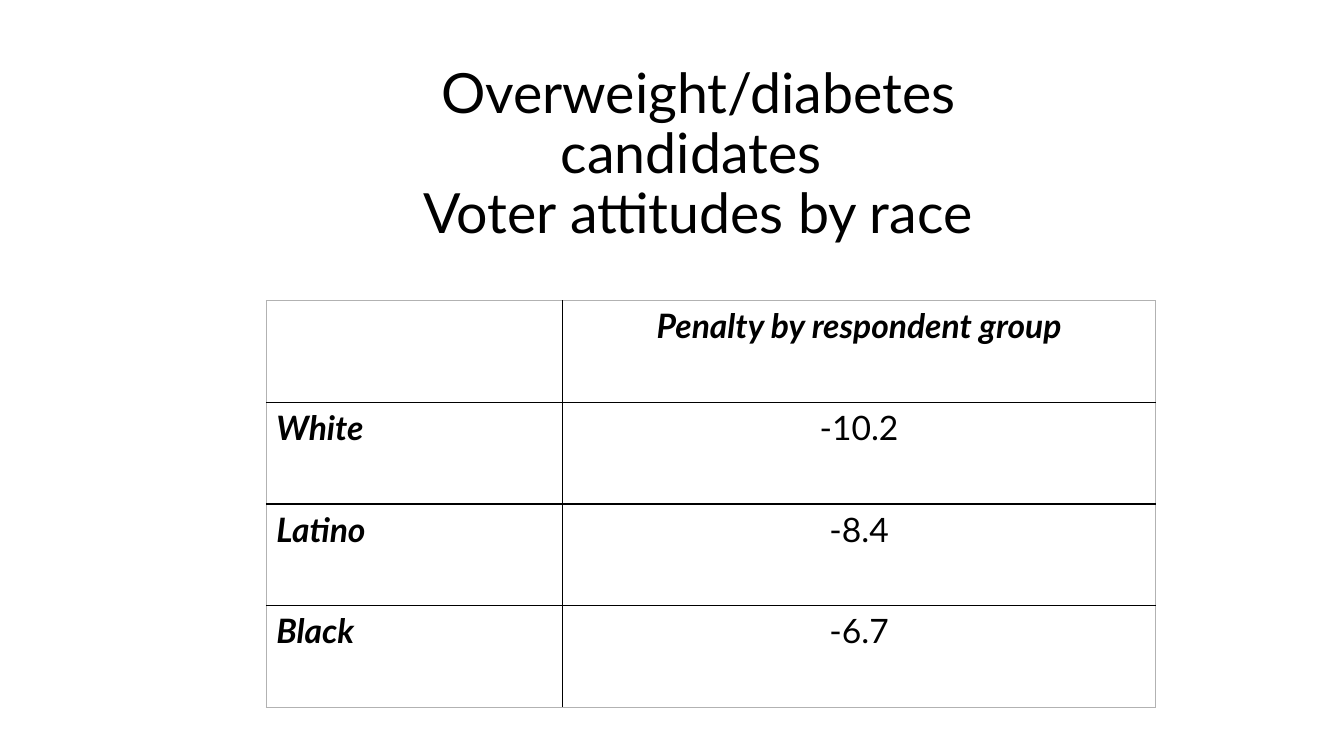
"""Build a slide with a title and a table of voter penalties by race."""
import pptx
import pptx.util
import pptx.dml.color
import pptx.enum.text
import pptx.oxml
import pptx.oxml.ns

Inches, Pt = pptx.util.Inches, pptx.util.Pt
CENTER = pptx.enum.text.PP_ALIGN.CENTER
LEFT = pptx.enum.text.PP_ALIGN.LEFT


def add_run(para, text, size, bold=False):
    run = para.add_run()
    run.text = text
    run.font.name = "Lato"
    run.font.size = Pt(size)
    run.font.bold = run.font.italic = bold
    run.font.color.rgb = pptx.dml.color.RGBColor.from_string("000000")


def add_edge(cell, side, color, width):
    cell._tc.get_or_add_tcPr().append(pptx.oxml.parse_xml(
        f'<a:{side} {pptx.oxml.ns.nsdecls("a")} w="{Pt(width)}">'
        f'<a:solidFill><a:srgbClr val="{color}"/></a:solidFill></a:{side}>'))


deck = pptx.Presentation()
deck.slide_width, deck.slide_height = Inches(13.33), Inches(7.5)
slide = deck.slides.add_slide(deck.slide_layouts[5])

title = slide.shapes.title
title.left, title.top = Inches(3.26), Inches(0.54)
title.width, title.height = Inches(7.33), Inches(2.01)
frame = title.text_frame
frame.word_wrap = True
frame.auto_size = pptx.enum.text.MSO_AUTO_SIZE.NONE
frame.vertical_anchor = pptx.enum.text.MSO_ANCHOR.MIDDLE
head = frame.paragraphs[0]
head.alignment = CENTER
head.line_spacing = 0.9
add_run(head, "Overweight/diabetes candidates ", 39.6)
head.add_line_break()
add_run(head, "Voter attitudes by race", 39.6)

rows = [
    ("", "Penalty by respondent group"),
    ("White", "-10.2"),
    ("Latino", "-8.4"),
    ("Black", "-6.7"),
]
unit, step = 2.94, 1.01
table = slide.shapes.add_table(
    len(rows), 2, Inches(2.64), Inches(2.98),
    Inches(3 * unit), Inches(len(rows) * step)).table
table.first_row = table.horz_banding = False
for col, share in zip(table.columns, (1, 2)):
    col.width = Inches(share * unit)

for r, row in enumerate(rows):
    table.rows[r].height = Inches(step)
    for c, text in enumerate(row):
        cell = table.cell(r, c)
        para = cell.text_frame.paragraphs[0]
        para.alignment = CENTER if c else LEFT
        if text:
            add_run(para, text, 24, r == 0 or c == 0)
        outer = {"lnL": c == 0, "lnR": c == 1,
                 "lnT": r == 0, "lnB": r == len(rows) - 1}
        for side, rim in outer.items():
            add_edge(cell, side, "B2B2B2" if rim else "000000", 0.5 if rim else 1)
        cell.fill.background()

deck.save("out.pptx")
